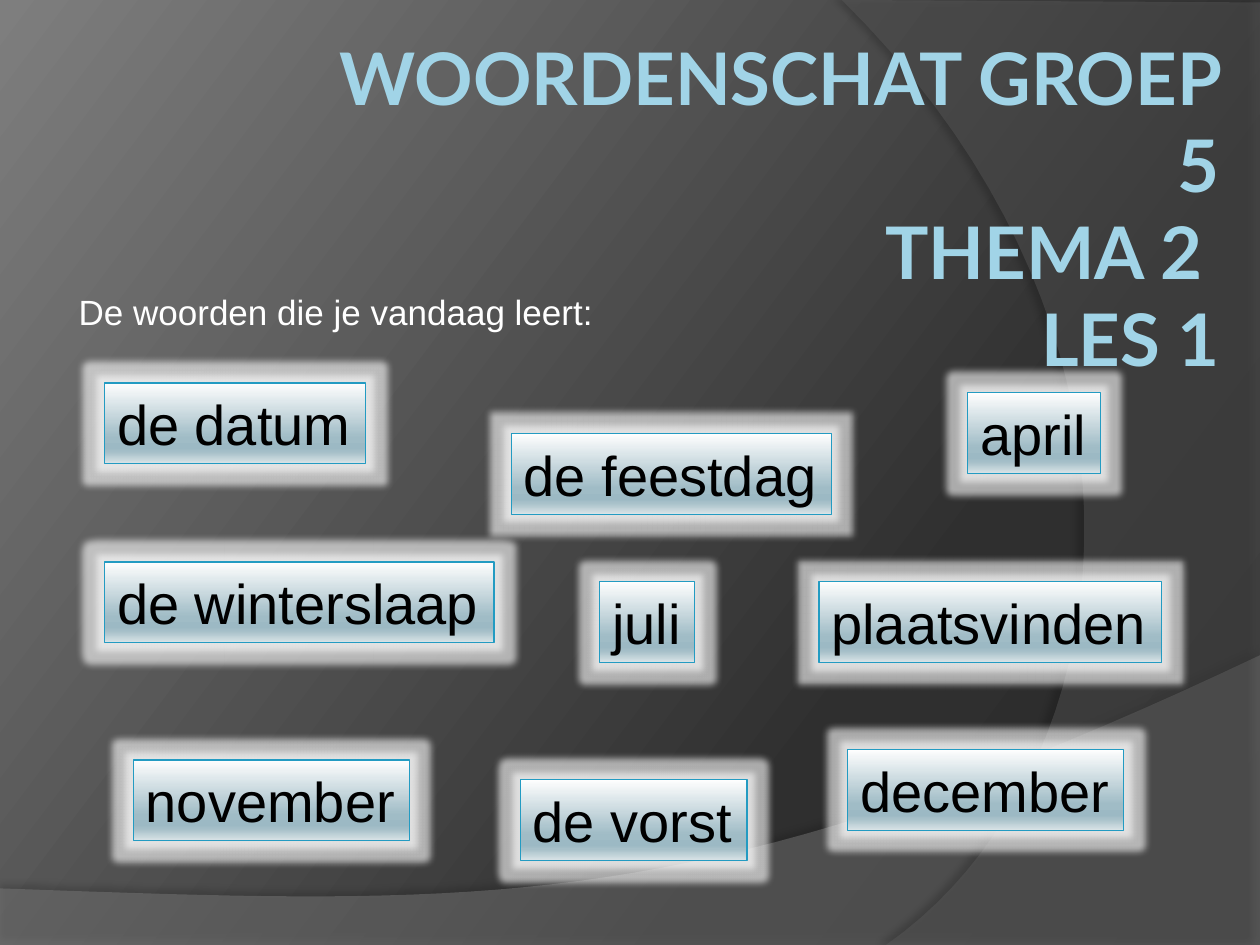
from pptx import Presentation
from pptx import util as u
from pptx.dml.color import RGBColor
from pptx.enum import shapes, text
from pptx.oxml import parse_xml
from pptx.oxml.ns import nsdecls, qn


def rgb(value):
    return RGBColor.from_string(value)


def cm(*values):
    return [u.Cm(v) for v in values]


def bezier(p0, p1, p2, p3, steps=40):
    points = []
    for i in range(1, steps + 1):
        t = i / steps
        weights = ((1 - t) ** 3, 3 * t * (1 - t) ** 2, 3 * t * t * (1 - t), t ** 3)
        points.append(tuple(sum(w * p[axis] for w, p in zip(weights, (p0, p1, p2, p3)))
                            for axis in (0, 1)))
    return points


def gradient(stops, angle):
    items = "".join(f'<a:gs pos="{pos * 1000}"><a:srgbClr val="{color}"/></a:gs>'
                    for pos, color in stops)
    return parse_xml(f'<a:gradFill {nsdecls("a")} rotWithShape="1"><a:gsLst>{items}</a:gsLst>'
                     f'<a:lin ang="{angle * 60000}" scaled="0"/></a:gradFill>')


def effect(tag, attributes, color, alpha):
    return parse_xml(f'<a:{tag} {nsdecls("a")} {attributes}><a:srgbClr val="{color}">'
                     f'<a:alpha val="{alpha * 1000}"/></a:srgbClr></a:{tag}>')


class Deck:
    heading_font = "Lato"
    body_font = "Arial"
    heading_color = "A1D4E7"
    body_color = "FFFFFF"
    word_color = "000000"
    word_line = "239BC2"
    word_height = 1.63
    word_stops = [(0, "FEFEFE"), (68, "A0BCC6"), (81, "9CB9C4"), (86, "A7C0C9"), (100, "DAE4E7")]
    backdrop_stops = [(0, "282828"), (30, "2F2F2F"), (100, "7E7E7E")]

    def __init__(self):
        self.prs = Presentation()
        self.prs.slide_width, self.prs.slide_height = cm(25.4, 19.05)
        self.s = self.prs.slides.add_slide(self.prs.slide_layouts[0])
        self.swooshes = 0

    def backdrop(self):
        self.s.background.fill.solid()
        props = self.s._element.find(".//" + qn("p:bgPr"))
        props.replace(props.find(qn("a:solidFill")), gradient(self.backdrop_stops, 217))

    def swoosh(self, points, color, alpha, shadow_alpha, distance, direction):
        start, *rest = [cm(*p) for p in points]
        builder = self.s.shapes.build_freeform(*start)
        builder.add_line_segments(rest, close=True)
        sp = builder.convert_to_shape()
        sp.line.fill.background()
        sp.fill.solid()
        sp.fill.fore_color.rgb = rgb(color)
        props = sp._element.spPr
        props.find(".//" + qn("a:srgbClr")).append(
            parse_xml(f'<a:alpha {nsdecls("a")} val="{alpha * 1000}"/>'))
        sp.shadow.inherit = False
        attributes = f'blurRad="{u.Pt(4)}" dist="{u.Pt(distance)}" dir="{direction * 60000}"'
        props.find(qn("a:effectLst")).append(
            effect("outerShdw", attributes, "000000", shadow_alpha))
        self.s.shapes._spTree.insert(2 + self.swooshes, sp._element)
        self.swooshes += 1

    def set_text(self, sp, content, box, insets, anchor, align, size, font, color, bold=False):
        sp.left, sp.top, sp.width, sp.height = cm(*box)
        tf = sp.text_frame
        tf.text = content
        tf.auto_size = text.MSO_AUTO_SIZE.NONE
        tf.margin_left, tf.margin_top, tf.margin_right, tf.margin_bottom = cm(*insets)
        tf.vertical_anchor = anchor
        p = tf.paragraphs[0]
        p.alignment = align
        p.space_before = u.Pt(0)
        for r in p.runs:
            r.font.size = u.Pt(size)
            r.font.name = font
            r.font.bold = bold
            r.font.color.rgb = rgb(color)

    def title(self, content, box):
        self.set_text(self.s.shapes.title, content, box, [0.13] * 4, text.MSO_ANCHOR.TOP,
                      text.PP_ALIGN.RIGHT, 41.4, self.heading_font, self.heading_color, True)

    def subtitle(self, content, box):
        self.set_text(self.s.placeholders[1], content, box, [0.25, 0, 0.13, 0.86],
                      text.MSO_ANCHOR.BOTTOM, text.PP_ALIGN.RIGHT, 20,
                      self.body_font, self.body_color)

    def word(self, content, left, top, width):
        box = (left, top, width, self.word_height)
        sp = self.s.shapes.add_shape(shapes.MSO_SHAPE.RECTANGLE, *cm(*box))
        sp.fill.solid()
        sp.line.color.rgb = rgb(self.word_line)
        sp.line.width = u.Pt(0.75)
        sp.shadow.inherit = False
        props = sp._element.spPr
        props.replace(props.find(qn("a:solidFill")), gradient(self.word_stops, 90))
        props.find(qn("a:effectLst")).append(effect("glow", f'rad="{u.Pt(8)}"', "FFFFFF", 60))
        self.set_text(sp, content, box, [0.25, 0.13, 0.25, 0.13], text.MSO_ANCHOR.MIDDLE,
                      text.PP_ALIGN.LEFT, 32, self.body_font, self.word_color)
        sp.text_frame.word_wrap = False


def main():
    deck = Deck()
    deck.backdrop()
    wave = bezier((25.4, 13.21), (14.2, 18.52), (9.93, 18.26), (0, 17.91))
    deck.swoosh([(0, 19.05), (25.4, 19.05), (25.4, 13.21)] + wave, "7F7F7F", 45, 35, 3.5, 270)
    arc = bezier((17.86, 19.05), (22.63, 15.72), (24.05, 6.99), (16.97, 0))
    deck.swoosh([(25.4, 0.05), (25.4, 19.05), (17.86, 19.05)] + arc, "5E5E5E", 40, 45, 4, 180)
    deck.title("WOORDENSCHAT GROEP 5\vTHEMA 2 \vLES 1", (6.71, 0.53, 18.01, 6.4))
    deck.subtitle("De woorden die je vandaag leert:", (1.09, 5.13, 11, 2.44))
    words = [
        ("de winterslaap", 2.11, 11.33, 7.85),
        ("de vorst", 10.49, 15.72, 4.57),
        ("plaatsvinden", 16.51, 11.73, 6.91),
        ("november", 2.69, 15.32, 5.56),
        ("juli", 12.09, 11.73, 1.91),
        ("de feestdag", 10.31, 8.74, 6.45),
        ("december", 17.09, 15.11, 5.56),
        ("de datum", 2.11, 7.72, 5.26),
        ("april", 19.51, 7.92, 2.67),
    ]
    for item in words:
        deck.word(*item)
    deck.prs.save("out.pptx")


if __name__ == "__main__":
    main()
